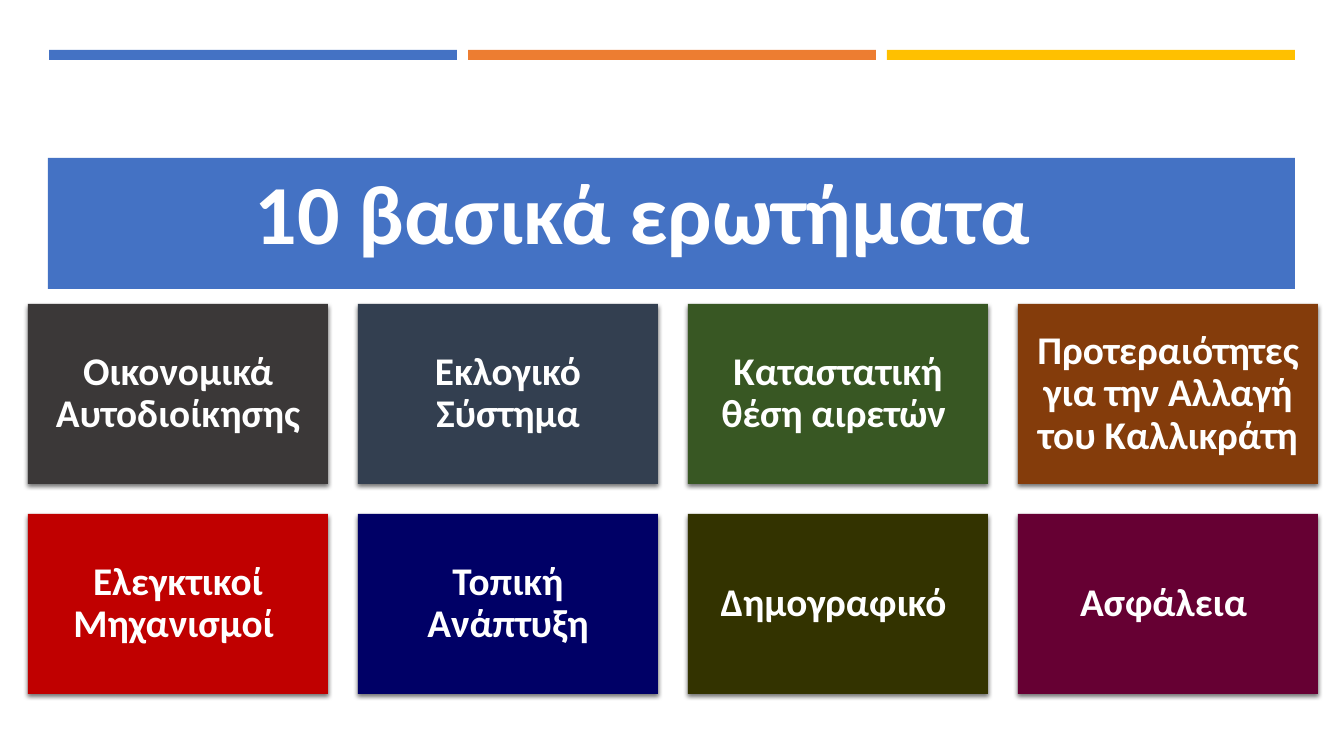
from dataclasses import dataclass

import pptx
import pptx.dml.color
import pptx.enum.shapes
import pptx.enum.text
import pptx.oxml
import pptx.oxml.ns
import pptx.presentation
import pptx.shapes.autoshape
import pptx.slide
import pptx.text.text
import pptx.util

SLIDE_WIDTH, SLIDE_HEIGHT = 1344, 756
EMU_PER_PX = 12192000 / SLIDE_WIDTH


@dataclass(frozen=True)
class Theme:
    font: str = "Calibri"
    text: str = "FFFFFF"
    banner: str = "4472C4"
    stripes: tuple[str, ...] = ("4472C4", "ED7D31", "FFC000")
    title_size: int = 60
    question_size: int = 28
    line_spacing: float = 0.9


@dataclass(frozen=True)
class Box:
    left: int
    top: int
    width: int
    height: int


@dataclass(frozen=True)
class Question:
    wording: str
    fill: str


THEME = Theme()
BANNER = Box(48, 158, 1247, 131)
TITLE = Box(44, 170, 1216, 98)
FIRST_STRIPE = Box(49, 50, 408, 10)
STRIPE_PITCH = 419
FIRST_TILE = Box(28, 304, 300, 180)
TILE_GAP = 30
TILE_INSET = 12
COLUMNS = 4

QUESTIONS = [
    Question("Οικονομικά Αυτοδιοίκησης", "3B3838"),
    Question("Εκλογικό Σύστημα", "333F50"),
    Question("Καταστατική θέση αιρετών ", "385723"),
    Question("Προτεραιότητες για την Αλλαγή του Καλλικράτη", "843C0B"),
    Question("Ελεγκτικοί Μηχανισμοί ", "C00000"),
    Question("Τοπική Ανάπτυξη", "000066"),
    Question("Δημογραφικό ", "333300"),
    Question("Ασφάλεια ", "660033"),
]


def px(length: int) -> pptx.util.Emu:
    return pptx.util.Emu(round(length * EMU_PER_PX))


def frame(box: Box) -> tuple[pptx.util.Emu, ...]:
    return px(box.left), px(box.top), px(box.width), px(box.height)


def add_block(slide: pptx.slide.Slide, box: Box, fill: str) -> pptx.shapes.autoshape.Shape:
    """Add a borderless, flat rectangle."""
    block = slide.shapes.add_shape(pptx.enum.shapes.MSO_SHAPE.RECTANGLE, *frame(box))
    block.shadow.inherit = False
    block.fill.solid()
    block.fill.fore_color.rgb = pptx.dml.color.RGBColor.from_string(fill)
    block.line.fill.background()
    return block


def write(text_frame: pptx.text.text.TextFrame, wording: str, size: int,
          anchor: pptx.enum.text.MSO_ANCHOR) -> None:
    """Set one bold, centred paragraph."""
    text_frame.word_wrap = True
    text_frame.vertical_anchor = anchor
    paragraph = text_frame.paragraphs[0]
    paragraph.text = wording
    paragraph.alignment = pptx.enum.text.PP_ALIGN.CENTER
    paragraph.line_spacing = THEME.line_spacing
    paragraph.font.name = THEME.font
    paragraph.font.size = pptx.util.Pt(size)
    paragraph.font.bold = True
    paragraph.font.color.rgb = pptx.dml.color.RGBColor.from_string(THEME.text)


def cast_shadow(block: pptx.shapes.autoshape.Shape) -> None:
    """Drop a soft black shadow straight down."""
    effects = block.element.spPr.find(pptx.oxml.ns.qn("a:effectLst"))
    effects.append(pptx.oxml.parse_xml(
        f'<a:outerShdw {pptx.oxml.ns.nsdecls("a")} blurRad="{pptx.util.Pt(3)}" '
        f'dist="{pptx.util.Pt(2)}" dir="5400000" algn="ctr" rotWithShape="0">'
        '<a:srgbClr val="000000"><a:alpha val="55000"/></a:srgbClr></a:outerShdw>'))


def add_stripes(slide: pptx.slide.Slide) -> None:
    for index, fill in enumerate(THEME.stripes):
        left = FIRST_STRIPE.left + index * STRIPE_PITCH
        add_block(slide, Box(left, FIRST_STRIPE.top, FIRST_STRIPE.width, FIRST_STRIPE.height), fill)


def add_title(slide: pptx.slide.Slide) -> None:
    add_block(slide, BANNER, THEME.banner)
    title = slide.shapes.add_textbox(*frame(TITLE))
    write(title.text_frame, "10 βασικά ερωτήματα ", THEME.title_size,
          pptx.enum.text.MSO_ANCHOR.BOTTOM)


def add_question(slide: pptx.slide.Slide, index: int, question: Question) -> None:
    row, column = divmod(index, COLUMNS)
    tile = add_block(slide, Box(FIRST_TILE.left + column * (FIRST_TILE.width + TILE_GAP),
                                FIRST_TILE.top + row * (FIRST_TILE.height + TILE_GAP),
                                FIRST_TILE.width, FIRST_TILE.height), question.fill)
    cast_shadow(tile)
    text_frame = tile.text_frame
    text_frame.margin_left = text_frame.margin_right = px(TILE_INSET)
    text_frame.margin_top = text_frame.margin_bottom = px(TILE_INSET)
    write(text_frame, question.wording, THEME.question_size, pptx.enum.text.MSO_ANCHOR.MIDDLE)


def main() -> None:
    presentation: pptx.presentation.Presentation = pptx.Presentation()
    presentation.slide_width = px(SLIDE_WIDTH)
    presentation.slide_height = px(SLIDE_HEIGHT)
    slide = presentation.slides.add_slide(presentation.slide_layouts[6])
    add_stripes(slide)
    add_title(slide)
    for index, question in enumerate(QUESTIONS):
        add_question(slide, index, question)
    presentation.save("out.pptx")


if __name__ == "__main__":
    main()
